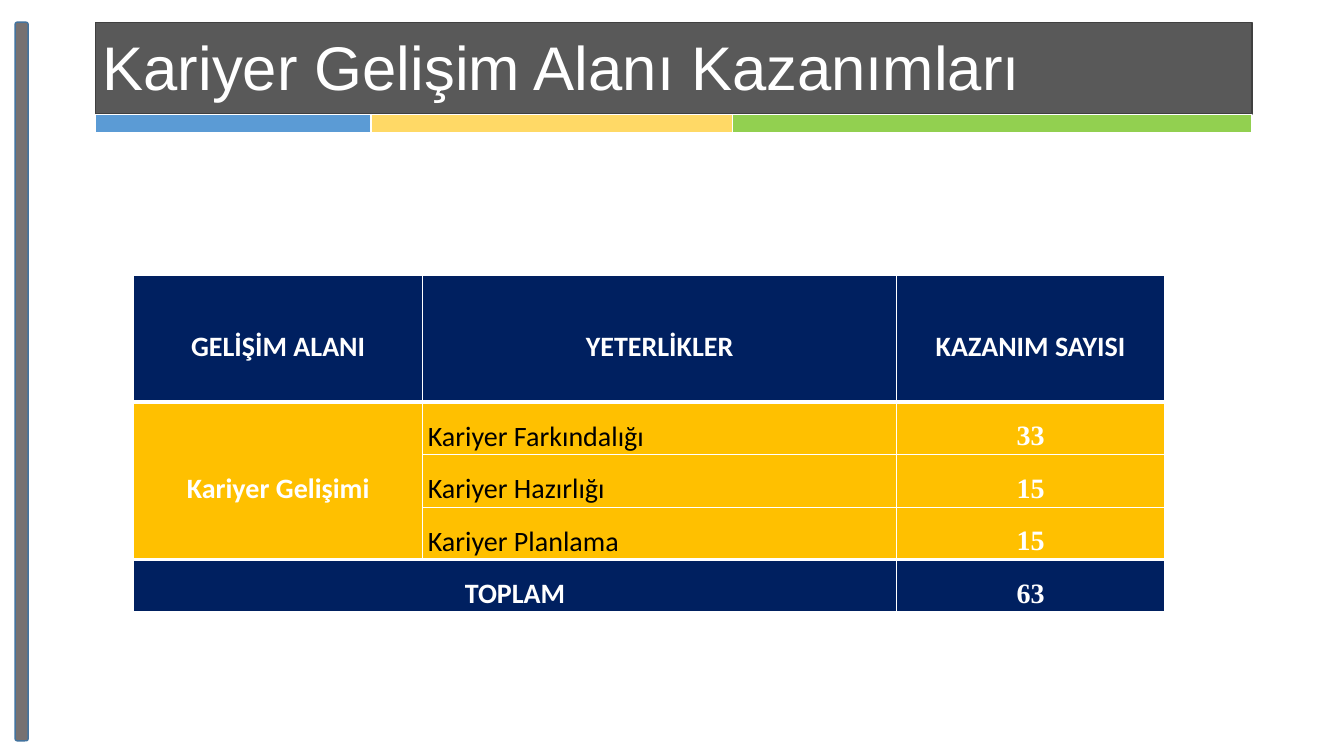
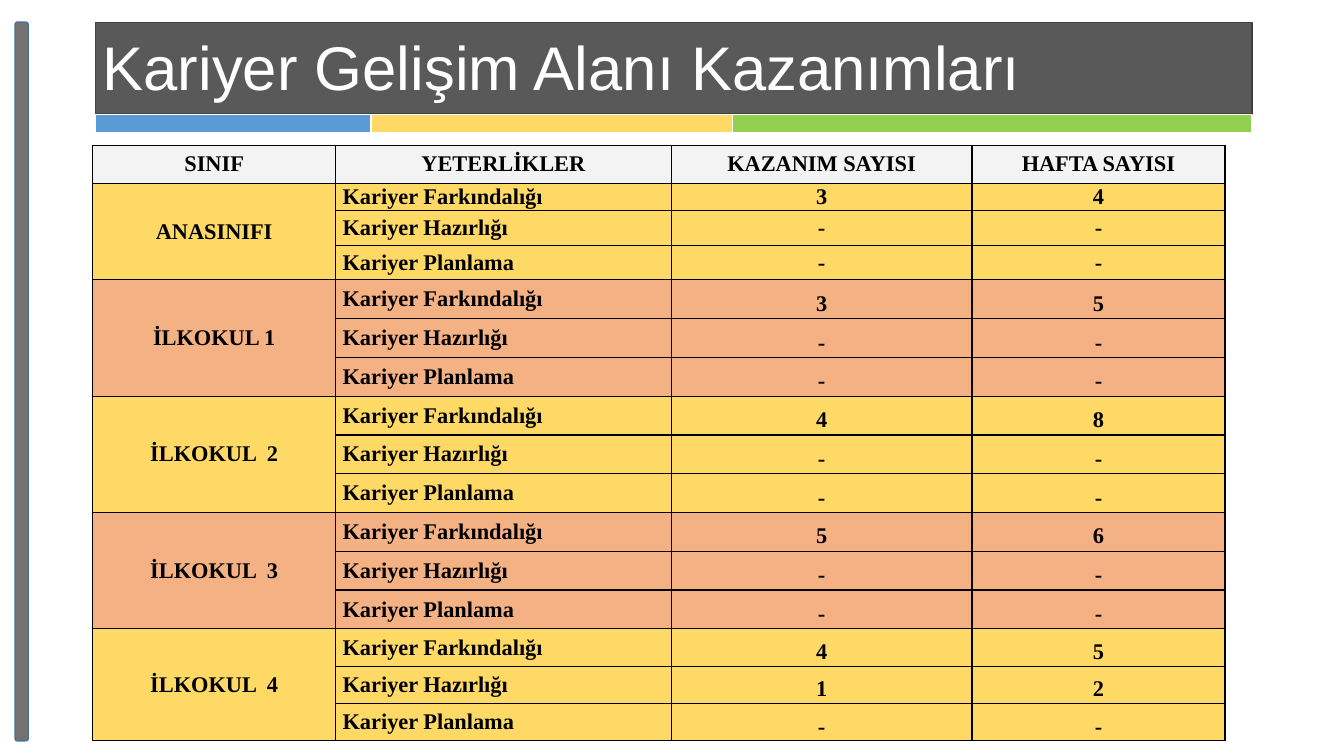
from dataclasses import dataclass
from typing import Optional

import lxml.etree
import pptx
import pptx.dml.color
import pptx.enum.shapes
import pptx.enum.text
import pptx.oxml.ns
import pptx.presentation
import pptx.slide
import pptx.table
import pptx.util

Inches = pptx.util.Inches
Pt = pptx.util.Pt
qn = pptx.oxml.ns.qn
ALIGN = pptx.enum.text.PP_ALIGN
MIDDLE = pptx.enum.text.MSO_ANCHOR.MIDDLE
SHAPE = pptx.enum.shapes.MSO_SHAPE

WIDTH, HEIGHT = Inches(13.33), Inches(7.5)
GRID_COLS, GRID_ROWS = 160, 90

WHITE, BLACK = "FFFFFF", "000000"
NAVY, AMBER = "002060", "FFC000"
YELLOW, ORANGE, PALE = "FFD966", "F4B183", "F3F3F3"
BAND_FILLS = ["5B9BD5", YELLOW, "92D050"]
SANS, SERIF, TITLE_FONT = "Calibri", "Times New Roman", "Arial"

TITLE = "Kariyer Gelişim Alanı Kazanımları"
SKILLS = ["Kariyer Farkındalığı", "Kariyer Hazırlığı", "Kariyer Planlama"]


@dataclass(frozen=True)
class Box:
    left: float
    top: float
    width: float
    height: float

    def emu(self) -> tuple[int, int, int, int]:
        return cols(self.left), rows(self.top), cols(self.width), rows(self.height)


@dataclass(frozen=True)
class Bar:
    kind: int
    box: Box
    fill: str
    line: str


@dataclass(frozen=True)
class Cell:
    text: str
    fill: str
    color: str = BLACK
    font: str = SERIF
    bold: bool = True
    centred: bool = True
    spacing: float = 1
    row_span: int = 1
    col_span: int = 1


@dataclass(frozen=True)
class Table:
    left: float
    top: float
    widths: list[float]
    heights: list[float]
    cells: list[list[Optional[Cell]]]
    size: float
    border: str
    inset: float
    thick_rules: tuple[int, ...] = ()


@dataclass(frozen=True)
class Grade:
    name: str
    fill: str
    gains: list[str]
    weeks: list[str]
    spacing: float = 1.36


def cols(n: float) -> int:
    return round(WIDTH * n / GRID_COLS)


def rows(n: float) -> int:
    return round(HEIGHT * n / GRID_ROWS)


def rgb(value: str) -> pptx.dml.color.RGBColor:
    return pptx.dml.color.RGBColor.from_string(value)


TITLE_BOX = Box(11.04, 2.64, 138, 11.4)
BARS = [
    Bar(SHAPE.RECTANGLE, Box(11.4, 2.7, 137.64, 10.86), "595959", "404040"),
    Bar(SHAPE.ROUNDED_RECTANGLE, Box(1.8, 2.64, 1.56, 85.56), "767171", "43739E"),
]
BAND = Table(11.4, 13.64, [32.76, 43.08, 61.8], [2.32],
             [[Cell("", fill) for fill in BAND_FILLS]], 8, WHITE, 0, (1,))


def set_borders(cell: pptx.table._Cell, color: str, top: float, bottom: float) -> None:
    tc_pr = cell._tc.get_or_add_tcPr()
    for side, width in (("L", 1), ("R", 1), ("T", top), ("B", bottom)):
        ln = lxml.etree.SubElement(tc_pr, qn(f"a:ln{side}"), w=str(Pt(width)))
        fill = lxml.etree.SubElement(ln, qn("a:solidFill"))
        lxml.etree.SubElement(fill, qn("a:srgbClr"), val=color)


def fill_cell(target: pptx.table._Cell, cell: Cell, table: Table) -> None:
    target.fill.solid()
    target.fill.fore_color.rgb = rgb(cell.fill)
    target.vertical_anchor = MIDDLE
    target.margin_left = target.margin_right = Inches(table.inset)
    target.margin_top = target.margin_bottom = 0
    p = target.text_frame.paragraphs[0]
    if not cell.text:
        lxml.etree.SubElement(p._p, qn("a:endParaRPr"), sz=str(round(table.size * 100)))
        return
    p.text = cell.text
    p.alignment = ALIGN.CENTER if cell.centred else ALIGN.LEFT
    p.line_spacing = cell.spacing
    p.font.name, p.font.size, p.font.bold = cell.font, Pt(table.size), cell.bold
    p.font.color.rgb = rgb(cell.color)


def draw_table(slide: pptx.slide.Slide, table: Table) -> None:
    box = Box(table.left, table.top, sum(table.widths), sum(table.heights))
    tbl = slide.shapes.add_table(len(table.heights), len(table.widths), *box.emu()).table
    tbl.first_row = tbl.horz_banding = False
    for column, width in zip(tbl.columns, table.widths):
        column.width = cols(width)
    for row, height in zip(tbl.rows, table.heights):
        row.height = rows(height)
    for i, line in enumerate(table.cells):
        top, bottom = (3 if edge in table.thick_rules else 1 for edge in (i, i + 1))
        for j, cell in enumerate(line):
            target = tbl.cell(i, j)
            set_borders(target, table.border, top, bottom)
            if cell is None:
                target.margin_top = target.margin_bottom = 0
                continue
            fill_cell(target, cell, table)
            if cell.row_span > 1 or cell.col_span > 1:
                target.merge(tbl.cell(i + cell.row_span - 1, j + cell.col_span - 1))


def draw_bar(slide: pptx.slide.Slide, bar: Bar) -> None:
    sp = slide.shapes.add_shape(bar.kind, *bar.box.emu())
    sp.shadow.inherit = False
    sp.fill.solid()
    sp.fill.fore_color.rgb = rgb(bar.fill)
    sp.line.color.rgb = rgb(bar.line)
    sp.line.width = Pt(1)


def draw_title(slide: pptx.slide.Slide) -> None:
    tf = slide.shapes.add_textbox(*TITLE_BOX.emu()).text_frame
    tf.word_wrap = True
    tf.vertical_anchor = MIDDLE
    p = tf.paragraphs[0]
    p.text = TITLE
    p.line_spacing = 0.9
    p.font.name, p.font.size = TITLE_FONT, Pt(44)
    p.font.color.rgb = rgb(WHITE)


def add_slide(prs: pptx.presentation.Presentation, table: Table) -> None:
    slide = prs.slides.add_slide(prs.slide_layouts[6])
    for bar in BARS:
        draw_bar(slide, bar)
    draw_table(slide, BAND)
    draw_title(slide)
    draw_table(slide, table)


def summary_table() -> Table:
    def label(text: str, fill: str, **spans: int) -> Cell:
        return Cell(text, fill, WHITE, SANS, spacing=1.5, **spans)

    def count(text: str, fill: str) -> Cell:
        return Cell(text, fill, WHITE, spacing=1.5)

    headings = ["GELİŞİM ALANI", "YETERLİKLER", "KAZANIM SAYISI"]
    cells = [[label(text, NAVY) for text in headings]]
    for i, (skill, total) in enumerate(zip(SKILLS, ["33", "15", "15"])):
        area = None if i else label("Kariyer Gelişimi", AMBER, row_span=len(SKILLS))
        name = Cell(skill, AMBER, font=SANS, bold=False, centred=False, spacing=1.5)
        cells.append([area, name, count(total, AMBER)])
    cells.append([label("TOPLAM", NAVY, col_span=2), None, count("63", NAVY)])
    return Table(15.9, 32.76, [34.44, 56.4, 31.92], [15.12] + [6.25] * 4,
                 cells, 20, WHITE, 0.05, (1, 4))


def grade_table() -> Table:
    grades = [
        Grade("ANASINIFI", YELLOW, ["3", "-", "-"], ["4", "-", "-"], 1),
        Grade("İLKOKUL 1", ORANGE, ["3", "-", "-"], ["5", "-", "-"]),
        Grade("İLKOKUL  2", YELLOW, ["4", "-", "-"], ["8", "-", "-"]),
        Grade("İLKOKUL  3", ORANGE, ["5", "-", "-"], ["6", "-", "-"]),
        Grade("İLKOKUL  4", YELLOW, ["4", "1", "-"], ["5", "2", "-"]),
    ]
    headings = ["SINIF", "YETERLİKLER", "KAZANIM SAYISI", "HAFTA SAYISI"]
    cells = [[Cell(text, PALE) for text in headings]]
    for grade in grades:
        for i, (skill, *values) in enumerate(zip(SKILLS, grade.gains, grade.weeks)):
            name = None if i else Cell(grade.name, grade.fill, row_span=len(SKILLS))
            counts = [Cell(v, grade.fill, spacing=grade.spacing) for v in values]
            cells.append([name, Cell(skill, grade.fill, centred=False), *counts])
    heights = [4.56, 3.12] + [4.14] * 2 + [4.62] * 9 + [4.44] * 3
    return Table(11.04, 17.28, [28.92, 39.96, 35.8, 30.12], heights,
                 cells, 16, BLACK, 0.07)


def main() -> None:
    prs = pptx.Presentation()
    prs.slide_width, prs.slide_height = WIDTH, HEIGHT
    for table in (summary_table(), grade_table()):
        add_slide(prs, table)
    prs.save("out.pptx")


if __name__ == "__main__":
    main()
